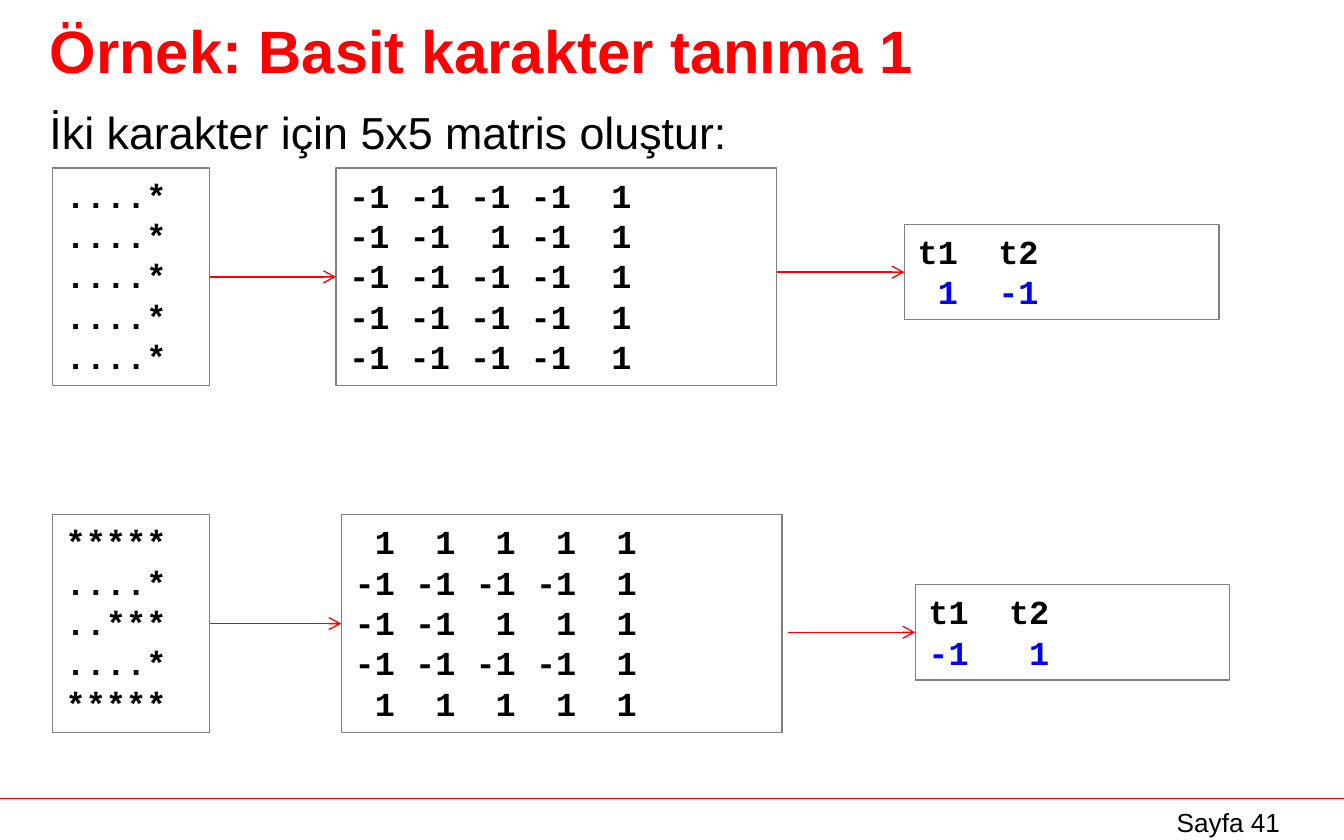
from lxml.etree import SubElement
from pptx import Presentation
from pptx.dml.color import RGBColor
from pptx.enum.shapes import MSO_CONNECTOR, MSO_SHAPE
from pptx.enum.text import MSO_ANCHOR as ANCHOR, MSO_AUTO_SIZE as FIT, PP_ALIGN as ALIGN
from pptx.oxml.ns import qn
from pptx.util import Inches, Pt

COLORS = {"red": "FF0000", "black": "000000", "gray": "808080", "blue": "0000FF"}
TOP, LEFT, RIGHT = 0, 1, 3  # connection sites in use

EXAMPLES = [
    {
        "char": ["....*"] * 5,
        "matrix": ["-1 -1 -1 -1  1", "-1 -1  1 -1  1"] + ["-1 -1 -1 -1  1"] * 3,
        "target": " 1  -1",
        "y": 1.25, "matrix_x": 2.5, "target_x": 6.73, "target_y": 1.67, "arrow_x": 5.78,
    },
    {
        "char": ["*****", "....*", "..***", "....*", "*****"],
        "matrix": [" 1  1  1  1  1", "-1 -1 -1 -1  1", "-1 -1  1  1  1",
                   "-1 -1 -1 -1  1", " 1  1  1  1  1"],
        "target": "-1   1",
        "y": 3.83, "matrix_x": 2.54, "target_x": 6.81, "target_y": 4.35, "arrow_x": 5.86,
    },
]


def color(name):
    return RGBColor.from_string(COLORS[name])


def set_font(p, size, name="Arial", c="black", bold=False):
    p.font.name, p.font.size, p.font.bold = name, Pt(size), bold
    p.font.color.rgb = color(c)


def place(sp, x, y, w, h):
    sp.left, sp.top, sp.width, sp.height = map(Inches, (x, y, w, h))


def add_line(s, x1, y1, x2, y2):
    line = s.shapes.add_connector(MSO_CONNECTOR.STRAIGHT, *map(Inches, (x1, y1, x2, y2)))
    line.line.color.rgb = color("red")
    line.line.width = Pt(0.75)
    SubElement(line._element.spPr, qn("a:effectLst"))
    return line


def add_arrow(s, x1, y1, x2, y2):
    arrow = add_line(s, x1, y1, x2, y2)
    SubElement(arrow.line._get_or_add_ln(), qn("a:tailEnd"), type="arrow")
    return arrow


def add_text(s, text, x, y, w, h, size, align=ALIGN.LEFT):
    tf = s.shapes.add_textbox(*map(Inches, (x, y, w, h))).text_frame
    tf.word_wrap = True
    p = tf.paragraphs[0]
    p.text, p.alignment = text, align
    set_font(p, size)


def add_code_box(s, lines, x, y, w, h, colors=None):
    """Outlined box with one monospaced paragraph per line."""
    sp = s.shapes.add_shape(MSO_SHAPE.RECTANGLE, *map(Inches, (x, y, w, h)))
    sp.shadow.inherit = False
    sp.fill.background()
    sp.line.color.rgb = color("gray")
    sp.line.width = Pt(0.75)
    tf = sp.text_frame
    tf.word_wrap = True
    tf.vertical_anchor = ANCHOR.TOP
    tf.text = "\n".join(lines)
    for p, c in zip(tf.paragraphs, colors or ["black"] * len(lines)):
        p.alignment = ALIGN.LEFT
        set_font(p, 18, "Courier New", c, True)
    return sp


def add_title(s, x, y, w, h):
    title = s.shapes.title
    place(title, x, y, w, h)
    tf = title.text_frame
    tf.text = "Örnek: Basit karakter tanıma 1"
    tf.auto_size = FIT.NONE
    tf.vertical_anchor = ANCHOR.MIDDLE
    p = tf.paragraphs[0]
    p.alignment = ALIGN.LEFT
    set_font(p, 32, c="red", bold=True)


def add_example(s, ex, x, h):
    """One row: character -> matrix -> target values."""
    y, mx, tx, ty = ex["y"], ex["matrix_x"], ex["target_x"], ex["target_y"]
    char_w, target_h = 1.17, 0.71
    char = add_code_box(s, ex["char"], x, y, char_w, h)
    matrix = add_code_box(s, ex["matrix"], mx, y, 3.28, h)
    target = add_code_box(s, ["t1  t2", ex["target"]], tx, ty, 2.34, target_h,
                          ["black", "blue"])

    mid = y + h / 2
    arrow = add_arrow(s, x + char_w, mid, mx, mid)
    arrow.begin_connect(char, RIGHT)
    arrow.end_connect(matrix, LEFT)

    mid = ty + target_h / 2
    add_arrow(s, ex["arrow_x"], mid, tx, mid).end_connect(target, LEFT)


def add_footer(s, y, w):
    add_line(s, 0, y, w, y)
    add_text(s, "Sayfa 41", w - 1.61, y + 0.01, 1.5, 0.26, 14, ALIGN.CENTER)


def main():
    prs = Presentation()
    prs.slide_width, prs.slide_height = Inches(10), Inches(6.25)
    s = prs.slides.add_slide(prs.slide_layouts[5])

    add_footer(s, 5.94, 10)
    add_title(s, 0.27, 0.04, 9.21, 0.66)
    add_text(s, "İki karakter için 5x5 matris oluştur:", 0.27, 0.73, 9.53, 0.5, 24)
    for ex in EXAMPLES:
        add_example(s, ex, 0.39, 1.62)

    prs.save("out.pptx")


if __name__ == "__main__":
    main()
